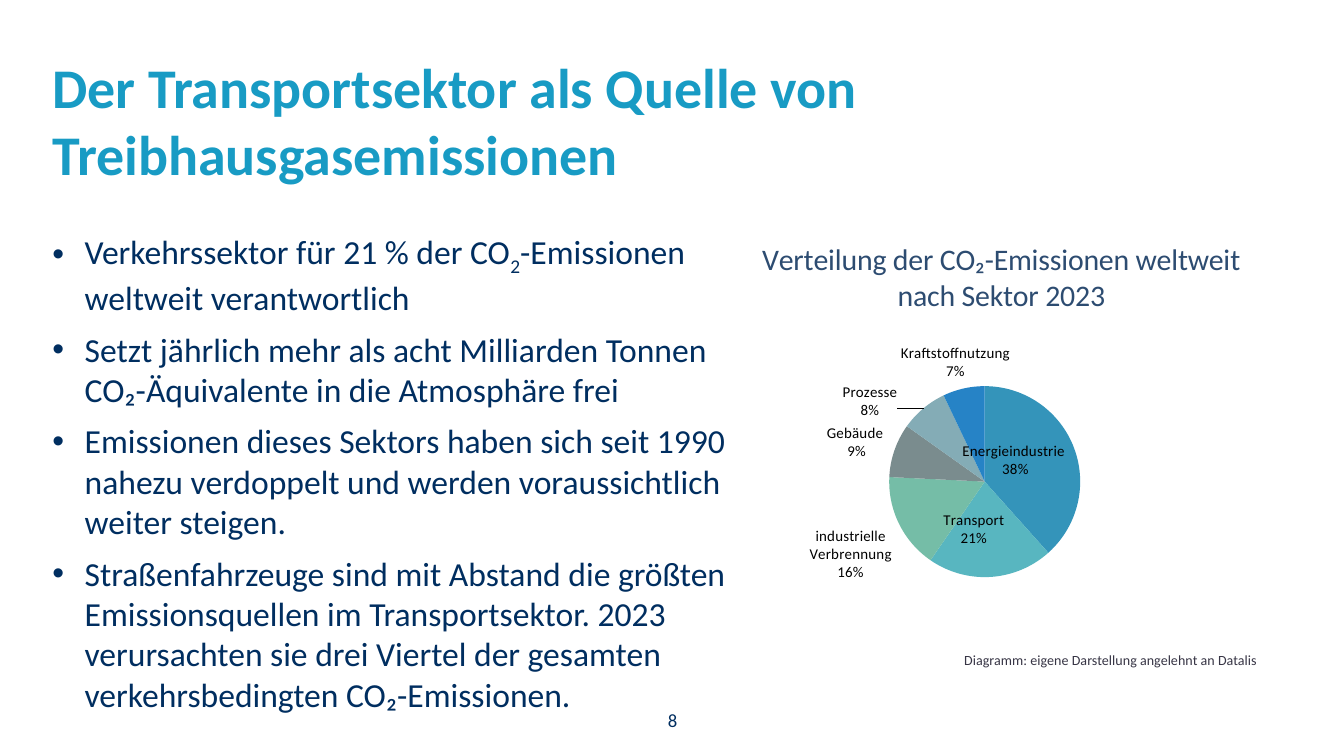
from copy import deepcopy
from dataclasses import dataclass

from lxml import etree
from pptx import Presentation
from pptx.chart.data import CategoryChartData
from pptx.dml.color import RGBColor
from pptx.enum.chart import XL_CHART_TYPE, XL_LABEL_POSITION
from pptx.enum.text import MSO_ANCHOR, PP_ALIGN
from pptx.oxml.ns import qn
from pptx.util import Inches, Pt

PIE = XL_CHART_TYPE.PIE
OUTSIDE = XL_LABEL_POSITION.OUTSIDE_END
TOP, MIDDLE = MSO_ANCHOR.TOP, MSO_ANCHOR.MIDDLE
LEFT, CENTER, RIGHT = PP_ALIGN.LEFT, PP_ALIGN.CENTER, PP_ALIGN.RIGHT
LABEL_SIZE_URI = "{CE6537A1-D6FC-4f65-9D91-7224C49458BB}"
LABEL_SIZE_LAYOUT = "{http://schemas.microsoft.com/office/drawing/2012/chart}layout"


@dataclass(frozen=True)
class Theme:
    """Hold the colours and type sizes of the slide."""
    font: str = "Calibri"
    heading: str = "189BC4"
    body: str = "002E60"
    chart_title: str = "2D4C71"
    credit: str = "373545"
    label: str = "000000"
    heading_size: float = 30
    body_size: float = 18
    chart_title_size: float = 16
    number_size: float = 10
    label_size: float = 8
    credit_size: float = 7.5


THEME = Theme()

BULLETS = [
    [("Verkehrssektor für 21 % der CO", 0), ("2", -25000),
     ("-Emissionen weltweit verantwortlich", 0)],
    [("Setzt jährlich mehr als acht Milliarden Tonnen CO₂-Äquivalente "
      "in die Atmosphäre frei", 0)],
    [("Emissionen dieses Sektors haben sich seit 1990 nahezu verdoppelt "
      "und werden voraussichtlich weiter steigen.", 0)],
    [("Straßenfahrzeuge sind mit Abstand die größten Emissionsquellen im "
      "Transportsektor. 2023 verursachten sie drei Viertel der gesamten "
      "verkehrsbedingten CO₂-Emissionen.", 0)],
]

SECTORS = [
    ("Energieindustrie ", 38, "3494BA"),
    ("Transport", 21, "58B6C0"),
    ("industrielle Verbrennung", 16, "75BDA7"),
    ("Gebäude ", 9, "7A8C8E"),
    ("Prozesse", 8, "84ACB6"),
    ("Kraftstoffnutzung", 7, "2683C6"),
    ("andere Sektoren", 0, "1F5970"),
]

PLACED_LABELS = {
    0: ("ctr", -0.02, -0.01),
    1: ("ctr", -0.02, 0),
    3: ("outEnd", 0, 0.03),
    4: ("outEnd", -0.03, 0.04),
    5: ("outEnd", 0.07, 0),
    6: ("outEnd", 0.22, 0.02),
}


def style_font(font, size, color, bold=False):
    """Apply the theme typeface with a size, colour and weight."""
    values = {"name": THEME.font, "size": Pt(size), "bold": bold}
    for name, value in values.items():
        setattr(font, name, value)
    font.color.rgb = RGBColor.from_string(color)


def add_frame(slide, box, anchor=TOP, margins=(0, 0)):
    """Add a wrapping text box and return its text frame."""
    frame = slide.shapes.add_textbox(*map(Inches, box)).text_frame
    horizontal, vertical = map(Inches, margins)
    values = {
        "word_wrap": True, "vertical_anchor": anchor,
        "margin_left": horizontal, "margin_right": horizontal,
        "margin_top": vertical, "margin_bottom": vertical,
    }
    for name, value in values.items():
        setattr(frame, name, value)
    return frame


def add_text(slide, box, text, size, color, align=LEFT, bold=False, **frame_values):
    """Add a text box with one paragraph."""
    paragraph = add_frame(slide, box, **frame_values).paragraphs[0]
    paragraph.alignment = align
    run = paragraph.add_run()
    run.text = text
    style_font(run.font, size, color, bold)


def add_bullets(slide, box, bullets):
    """Add a bulleted list whose runs carry a baseline shift."""
    frame = add_frame(slide, box)
    indent = Inches(0.24)
    for index, runs in enumerate(bullets):
        paragraph = frame.add_paragraph() if index else frame.paragraphs[0]
        properties = paragraph._p.get_or_add_pPr()
        properties.set("marL", str(indent))
        properties.set("indent", str(-indent))
        etree.SubElement(properties, qn("a:buFont")).set("typeface", "Arial")
        etree.SubElement(properties, qn("a:buChar")).set("char", "•")
        paragraph.space_before = Pt(6 if index else 0)
        for text, baseline in runs:
            run = paragraph.add_run()
            run.text = text
            style_font(run.font, THEME.body_size, THEME.body)
            if baseline:
                run.font._element.set("baseline", str(baseline))


def add_values(parent, values):
    """Append one chart element per value."""
    for name, value in values.items():
        etree.SubElement(parent, qn(f"c:{name}")).set("val", str(value))


def set_layout(element, index, values):
    """Place a chart part by a manual layout."""
    for old in element.findall(qn("c:layout")):
        element.remove(old)
    layout = etree.Element(qn("c:layout"))
    add_values(etree.SubElement(layout, qn("c:manualLayout")), values)
    element.insert(index, layout)


def make_placed_label(index, position, left, top, text_properties):
    """Build the unwrapped label of one slice with its own position."""
    label = etree.Element(qn("c:dLbl"))
    add_values(label, {"idx": index})
    set_layout(label, 1, {"x": left, "y": top})
    text = deepcopy(text_properties)
    text.find(qn("a:bodyPr")).set("wrap", "none")
    label.append(text)
    add_values(label, {
        "dLblPos": position, "showLegendKey": 0, "showVal": 0,
        "showCatName": 1, "showSerName": 0, "showPercent": 1,
        "showBubbleSize": 0,
    })
    etree.SubElement(label, qn("c:separator")).text = "\n"
    extensions = etree.SubElement(label, qn("c:extLst"))
    extension = etree.SubElement(extensions, qn("c:ext"), uri=LABEL_SIZE_URI)
    size = etree.SubElement(extension, LABEL_SIZE_LAYOUT)
    add_values(etree.SubElement(size, qn("c:manualLayout")), {"w": 0.18, "h": 0.1})
    return label


def label_slices(series):
    """Label the slices with category and percentage."""
    labels = series.data_labels
    style_font(labels.font, THEME.label_size, THEME.label)
    values = {
        "show_value": False, "show_category_name": True,
        "show_percentage": True, "position": OUTSIDE,
    }
    for name, value in values.items():
        setattr(labels, name, value)
    element = labels._element
    separator = etree.Element(qn("c:separator"))
    separator.text = "\n"
    element.find(qn("c:showBubbleSize")).addnext(separator)
    text_properties = element.find(qn("c:txPr"))
    for order, (index, place) in enumerate(PLACED_LABELS.items()):
        element.insert(order, make_placed_label(index, *place, text_properties))


def add_sector_pie(slide, box, title):
    """Add the pie chart of emissions by sector."""
    names, shares, colors = zip(*SECTORS)
    data = CategoryChartData()
    data.categories = names
    data.add_series("Series 1", shares)
    chart = slide.shapes.add_chart(PIE, *map(Inches, box), data).chart
    chart.has_legend = False
    style_font(chart.font, THEME.number_size, THEME.label)
    chart.has_title = True
    run = chart.chart_title.text_frame.paragraphs[0].add_run()
    run.text = title
    style_font(run.font, THEME.chart_title_size, THEME.chart_title)
    set_layout(chart.chart_title._element, 1,
               {"xMode": "edge", "yMode": "edge", "x": 0.15, "y": 0.04})
    set_layout(chart._chartSpace.chart.plotArea, 0,
               {"layoutTarget": "inner", "xMode": "edge", "yMode": "edge",
                "x": 0.34, "y": 0.4, "w": 0.28, "h": 0.45})
    series = chart.plots[0].series[0]
    for index, color in enumerate(colors):
        fill = series.points[index].format.fill
        fill.solid()
        fill.fore_color.rgb = RGBColor.from_string(color)
    label_slices(series)


def main():
    """Build and save the slide."""
    presentation = Presentation()
    presentation.slide_width = Inches(10)
    presentation.slide_height = Inches(10 * 9 / 16)
    slide = presentation.slides.add_slide(presentation.slide_layouts[6])
    add_text(slide, (0.39, 0.39, 8.27, 1.02),
             "Der Transportsektor als Quelle von Treibhausgasemissionen",
             THEME.heading_size, THEME.heading, bold=True)
    add_bullets(slide, (0.39, 1.72, 5.23, 3.4), BULLETS)
    add_text(slide, (4.61, 5.2, 0.79, 0.31), "8", THEME.number_size, THEME.body,
             align=CENTER, anchor=MIDDLE)
    add_sector_pie(slide, (4.86, 1.61, 5.14, 3.16),
                   "Verteilung der CO₂-Emissionen weltweit nach Sektor 2023")
    add_text(slide, (6.89, 4.76, 2.53, 0.3),
             "Diagramm: eigene Darstellung angelehnt an Datalis",
             THEME.credit_size, THEME.credit, align=RIGHT, anchor=MIDDLE,
             margins=(0.07, 0.04))
    presentation.save("out.pptx")


if __name__ == "__main__":
    main()
